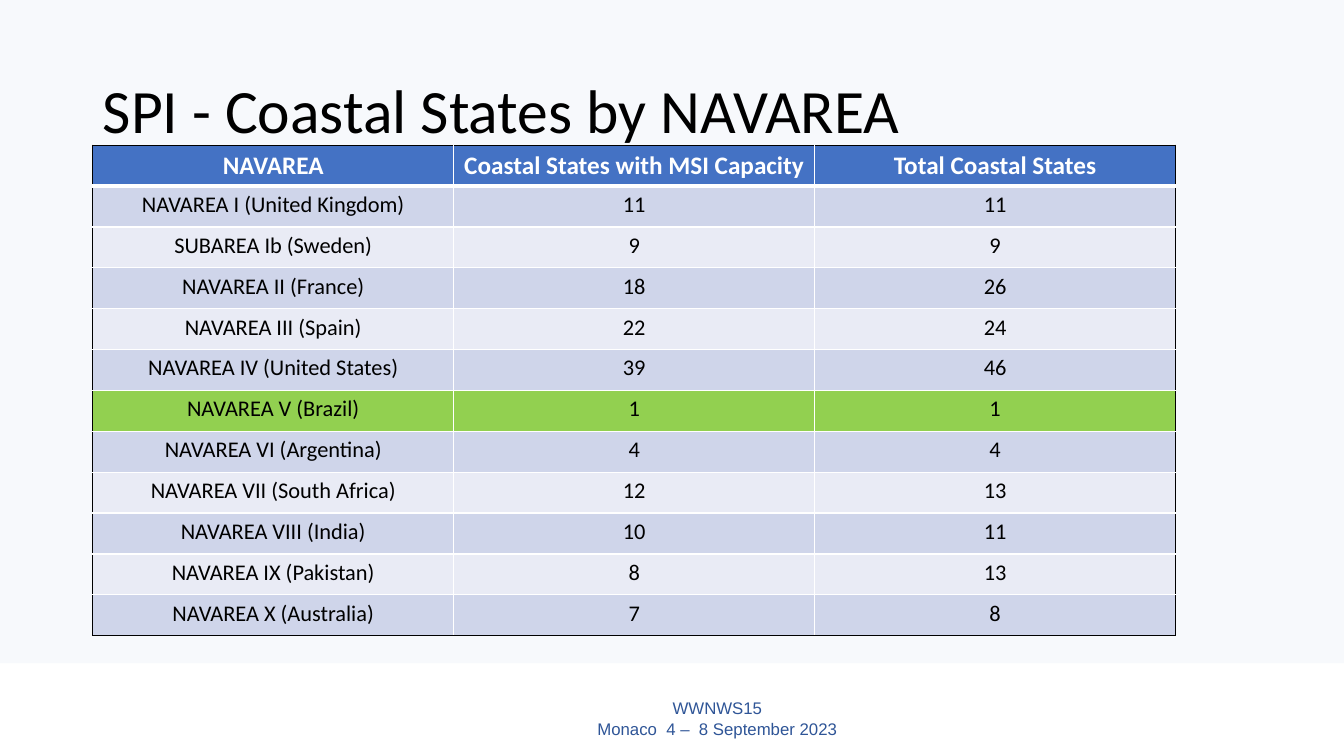
from typing import NamedTuple

import pptx
import pptx.dml.color
import pptx.enum.shapes
import pptx.enum.text
import pptx.oxml
import pptx.oxml.ns
import pptx.util
from pptx.util import Inches

BLACK, WHITE = "000000", "FFFFFF"
HEADER_BLUE, FOOTER_BLUE, PALE_BLUE = "4472C4", "2F5597", "DAE3F3"
HIGHLIGHT = "92D050"
BANDS = ("CFD5EA", "E9EBF5")
HEADINGS = ("NAVAREA", "Coastal States with MSI Capacity", "Total Coastal States")
ALIGN = pptx.enum.text.PP_ALIGN
ANCHOR = pptx.enum.text.MSO_ANCHOR


class Area(NamedTuple):
    name: str
    capable: int
    total: int
    highlighted: bool = False


class Border(NamedTuple):
    side: str
    color: str
    points: int = 1


AREAS = (
    Area("NAVAREA I (United Kingdom)", 11, 11),
    Area("SUBAREA Ib (Sweden)", 9, 9),
    Area("NAVAREA II (France)", 18, 26),
    Area("NAVAREA III (Spain)", 22, 24),
    Area("NAVAREA IV (United States)", 39, 46),
    Area("NAVAREA V (Brazil)", 1, 1, highlighted=True),
    Area("NAVAREA VI (Argentina)", 4, 4),
    Area("NAVAREA VII (South Africa)", 12, 13),
    Area("NAVAREA VIII (India)", 10, 11),
    Area("NAVAREA IX (Pakistan)", 8, 13),
    Area("NAVAREA X (Australia)", 7, 8),
)


def rgb(color: str) -> pptx.dml.color.RGBColor:
    return pptx.dml.color.RGBColor.from_string(color)


def write(frame, text: str, size: int, color: str, font: str = "Calibri",
          align=ALIGN.CENTER, bold: bool = False):
    """Fill the first paragraph of a text frame and format it."""
    para = frame.paragraphs[0]
    para.text = text
    para.alignment = align
    para.font.name = font
    para.font.size = pptx.util.Pt(size)
    para.font.bold = bold
    para.font.color.rgb = rgb(color)
    return para


def add_background(page):
    box = page.shapes.add_shape(pptx.enum.shapes.MSO_SHAPE.RECTANGLE,
                                0, 0, Inches(13.33), Inches(6.58))
    box.shadow.inherit = False
    box.line.fill.background()
    box.fill.solid()
    box.fill.fore_color.rgb = rgb(PALE_BLUE)
    color = box.element.spPr.find(".//" + pptx.oxml.ns.qn("a:srgbClr"))
    color.append(pptx.oxml.parse_xml(
        f'<a:alpha {pptx.oxml.ns.nsdecls("a")} val="21000"/>'))


def add_footer(page):
    box = page.shapes.add_textbox(Inches(4.22), Inches(6.9), Inches(5.79), Inches(0.45))
    box.text_frame.word_wrap = True
    box.text_frame.vertical_anchor = ANCHOR.MIDDLE
    write(box.text_frame, "WWNWS15\vMonaco  4 –  8 September 2023", 12, FOOTER_BLUE, "Arial")


def place_title(page):
    title = page.shapes.title
    title.left, title.top = Inches(0.92), Inches(0.4)
    title.width, title.height = Inches(11.5), Inches(1.45)
    title.text_frame.vertical_anchor = ANCHOR.MIDDLE
    title.text_frame.auto_size = pptx.enum.text.MSO_AUTO_SIZE.NONE
    para = write(title.text_frame, "SPI - Coastal States by NAVAREA", 44, BLACK, align=ALIGN.LEFT)
    para.line_spacing = 0.9
    page.shapes[-1].element.addnext(title.element)  # in front of the background


def draw_border(cell, border: Border):
    cell._tc.get_or_add_tcPr().append(pptx.oxml.parse_xml(
        f'<a:ln{border.side} {pptx.oxml.ns.nsdecls("a")} w="{border.points * 12700}">'
        f'<a:solidFill><a:srgbClr val="{border.color}"/></a:solidFill></a:ln{border.side}>'))


def add_area_table(page):
    rows, columns = len(AREAS) + 1, len(HEADINGS)
    table = page.shapes.add_table(rows, columns, Inches(0.92), Inches(1.44),
                                  Inches(10.74), Inches(4.87)).table
    lines = [HEADINGS] + [(area.name, area.capable, area.total) for area in AREAS]
    fills = [HEADER_BLUE] + [HIGHLIGHT if area.highlighted else BANDS[index % 2]
                             for index, area in enumerate(AREAS)]
    for row, (line, fill) in enumerate(zip(lines, fills)):
        header = row == 0
        for column, value in enumerate(line):
            cell = table.cell(row, column)
            write(cell.text_frame, str(value), 18 if header else 16,
                  WHITE if header else BLACK, bold=header)
            for side, outer in (("L", column == 0), ("R", column == columns - 1),
                                ("T", header), ("B", row == rows - 1)):
                thick = (header and side == "B") or (row == 1 and side == "T")
                draw_border(cell, Border(side, BLACK if outer else WHITE, 3 if thick else 1))
            cell.fill.solid()
            cell.fill.fore_color.rgb = rgb(fill)


def main():
    deck = pptx.Presentation()
    deck.slide_width, deck.slide_height = Inches(13.33), Inches(7.5)
    page = deck.slides.add_slide(deck.slide_layouts.get_by_name("Title Only"))
    add_background(page)
    add_footer(page)
    place_title(page)
    add_area_table(page)
    deck.save("out.pptx")


if __name__ == "__main__":
    main()
